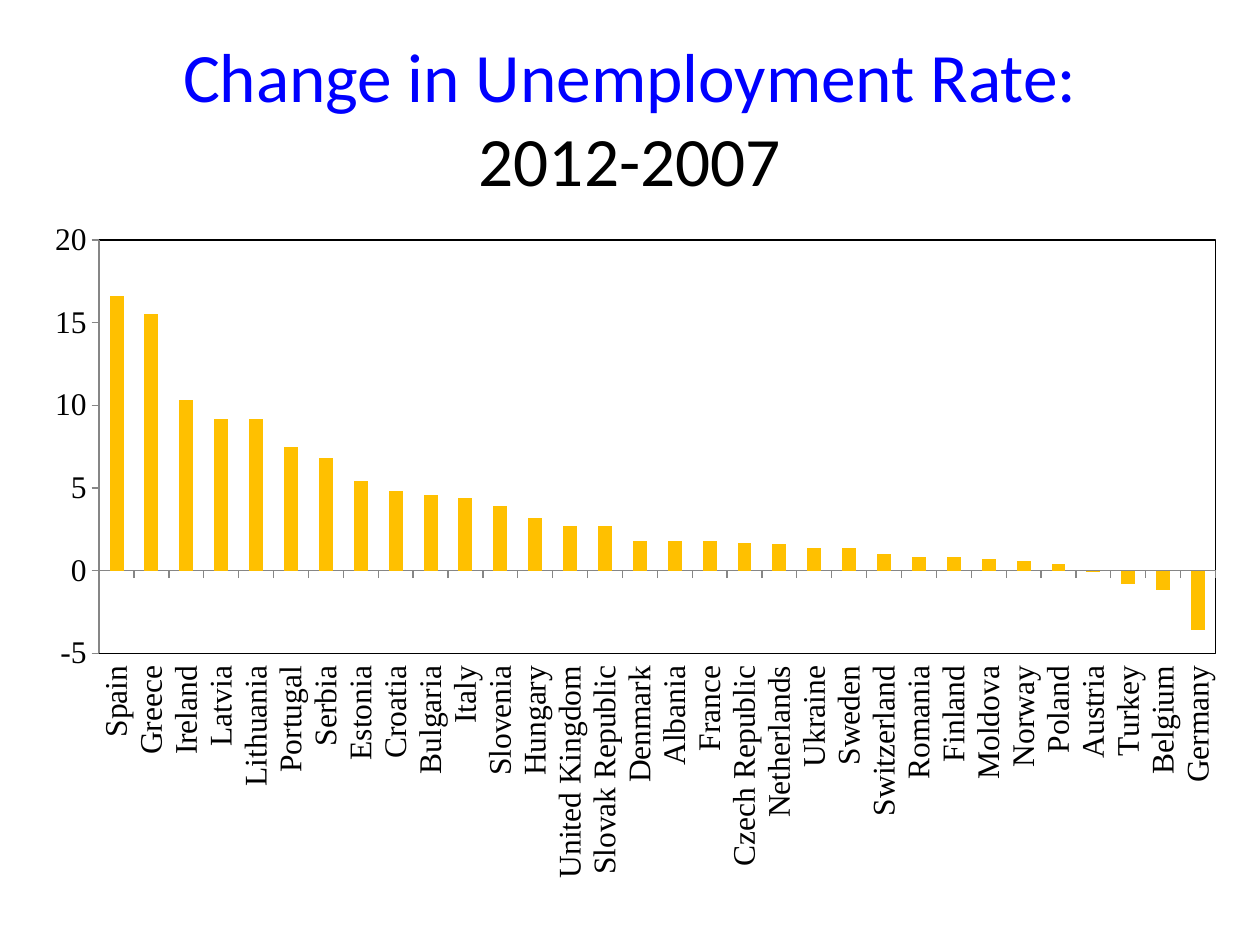
from lxml import etree
from pptx import Presentation, util as u
from pptx.chart.data import CategoryChartData
from pptx.dml.color import RGBColor
from pptx.enum import chart as ch, text
from pptx.oxml import parse_xml
from pptx.oxml.ns import nsdecls, qn

BLUE = RGBColor(0x00, 0x00, 0xFF)
BLACK = RGBColor(0x00, 0x00, 0x00)
GOLD = RGBColor(0xFF, 0xC0, 0x00)
GRAY = RGBColor(0x86, 0x86, 0x86)

WIDTH, HEIGHT = u.Inches(10), u.Inches(7.5)
TITLE_BOX = (0.05, 0.04, 0.9, 0.167)
CHART_BOX = (0.025, 0.223, 0.958, 0.723)
PLOT_BOX = {"x": 0.056, "y": 0.043, "w": 0.925, "h": 0.605}

RATE_CHANGES = {
    "Spain": 16.6, "Greece": 15.5, "Ireland": 10.3, "Latvia": 9.2,
    "Lithuania": 9.2, "Portugal": 7.5, "Serbia": 6.8, "Estonia": 5.4,
    "Croatia": 4.8, "Bulgaria": 4.6, "Italy": 4.4, "Slovenia": 3.9,
    "Hungary": 3.2, "United Kingdom": 2.7, "Slovak Republic": 2.7,
    "Denmark": 1.8, "Albania": 1.8, "France": 1.8, "Czech Republic": 1.7,
    "Netherlands": 1.6, "Ukraine": 1.4, "Sweden": 1.4, "Switzerland": 1,
    "Romania": 0.8, "Finland": 0.8, "Moldova": 0.7, "Norway": 0.6,
    "Poland": 0.4, "Austria": -0.1, "Turkey": -0.8, "Belgium": -1.2,
    "Germany": -3.6,
}


def place(box):
    x, y, w, h = box
    return [u.Emu(round(v)) for v in (x * WIDTH, y * HEIGHT, w * WIDTH, h * HEIGHT)]


def add_run(p, words, *, size, color, font="Calibri"):
    r = p.add_run()
    r.text = words
    r.font.size = u.Pt(size)
    r.font.name = font
    r.font.color.rgb = color


def add_title(s, box):
    tf = s.shapes.add_textbox(*place(box)).text_frame
    tf.word_wrap = True
    tf.vertical_anchor = text.MSO_ANCHOR.MIDDLE
    p = tf.paragraphs[0]
    p.alignment = text.PP_ALIGN.CENTER
    add_run(p, "Change in Unemployment Rate:", size=39.6, color=BLUE)
    p.add_line_break()
    add_run(p, "2012-2007", size=39.6, color=BLACK)


def frame_plot(chart):
    plot_area = chart._chartSpace.chart.plotArea
    for old in plot_area.findall(qn("c:layout")):
        plot_area.remove(old)
    layout = parse_xml(f"<c:layout {nsdecls('c')}><c:manualLayout/></c:layout>")
    settings = {"layoutTarget": "inner", "xMode": "edge", "yMode": "edge", **PLOT_BOX}
    for tag, value in settings.items():
        etree.SubElement(layout[0], qn(f"c:{tag}")).set("val", str(value))
    plot_area.insert(0, layout)
    plot_area.append(parse_xml(
        f"<c:spPr {nsdecls('c', 'a')}><a:noFill/><a:ln w='9525'><a:solidFill>"
        f"<a:srgbClr val='{BLACK}'/></a:solidFill></a:ln></c:spPr>"))


def add_rate_chart(s, box):
    data = CategoryChartData()
    data.categories = list(RATE_CHANGES)
    data.add_series("Series 1", list(RATE_CHANGES.values()))
    kind = ch.XL_CHART_TYPE.COLUMN_CLUSTERED
    chart = s.shapes.add_chart(kind, *place(box), data).chart
    chart.has_title = False
    chart.has_legend = False
    chart.font.size = u.Pt(18)
    chart.font.name = "Times New Roman"
    chart.font.color.rgb = BLACK

    plot = chart.plots[0]
    plot.gap_width = 150
    plot.vary_by_categories = False
    series = plot.series[0]
    series.invert_if_negative = False
    series.format.fill.solid()
    series.format.fill.fore_color.rgb = GOLD

    countries, rates = chart.category_axis, chart.value_axis
    for axis in (countries, rates):
        axis.has_major_gridlines = False
        axis.major_tick_mark = ch.XL_TICK_MARK.OUTSIDE
        axis.minor_tick_mark = ch.XL_TICK_MARK.NONE
        axis.format.line.color.rgb = GRAY
        axis.format.line.width = u.Pt(0.75)
        axis.tick_labels.font.size = u.Pt(18)
    countries.tick_label_position = ch.XL_TICK_LABEL_POSITION.LOW
    countries._element.txPr.bodyPr.set("rot", "-5400000")
    countries._element.txPr.bodyPr.set("vert", "horz")
    rates.minimum_scale, rates.maximum_scale, rates.major_unit = -5, 20, 5
    frame_plot(chart)


def main():
    prs = Presentation()
    prs.slide_width, prs.slide_height = WIDTH, HEIGHT
    s = prs.slides.add_slide(prs.slide_layouts[6])
    add_title(s, TITLE_BOX)
    add_rate_chart(s, CHART_BOX)
    prs.save("out.pptx")


if __name__ == "__main__":
    main()
